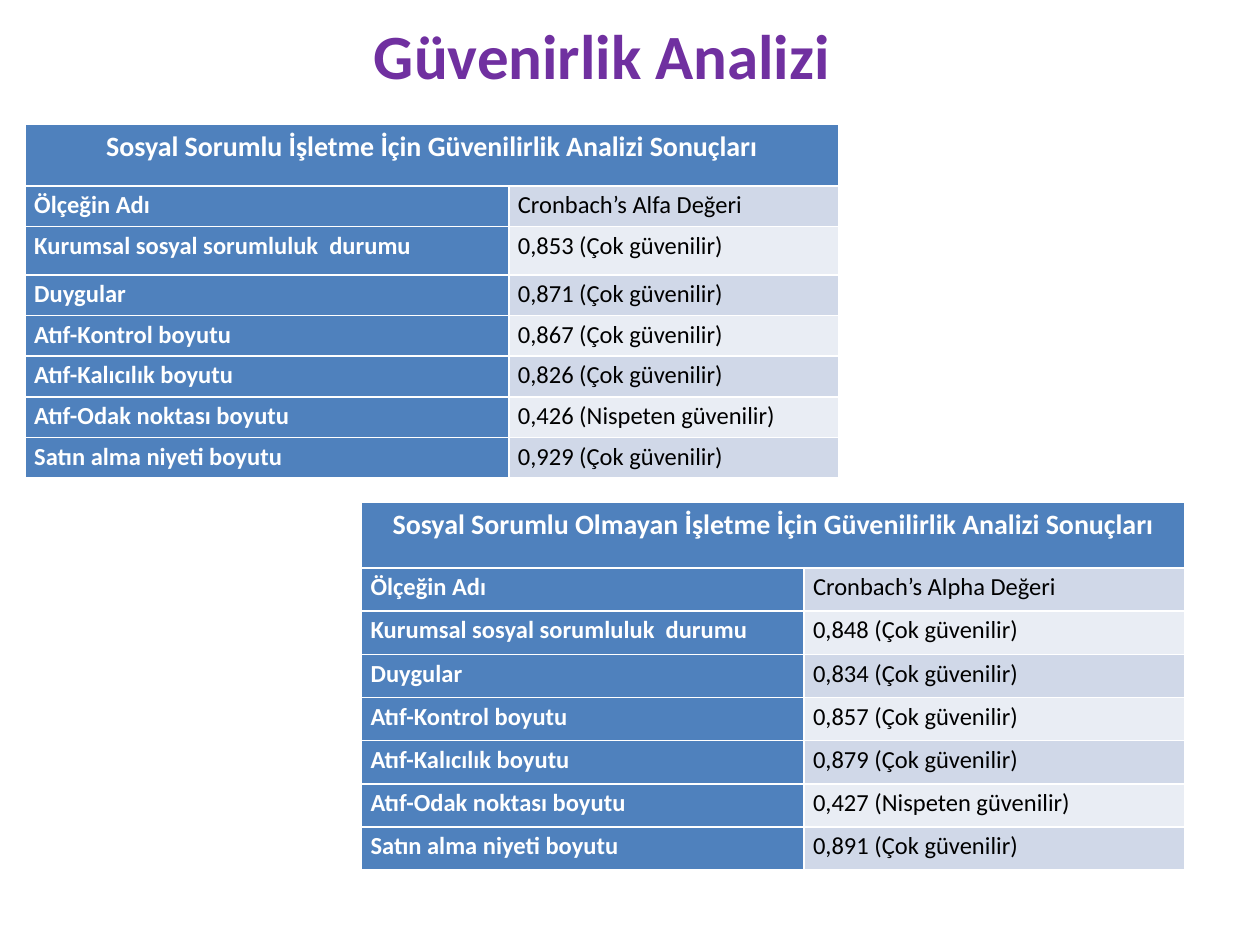
from pptx import Presentation
from pptx.dml.color import RGBColor
from pptx.enum.text import MSO_ANCHOR, PP_ALIGN
from pptx.util import Cm, Pt

CENTER, JUSTIFY = PP_ALIGN.CENTER, PP_ALIGN.JUSTIFY
MIDDLE = MSO_ANCHOR.MIDDLE

SCALES = [
    "Ölçeğin Adı",
    "Kurumsal sosyal sorumluluk  durumu",
    "Duygular",
    "Atıf-Kontrol boyutu",
    "Atıf-Kalıcılık boyutu",
    "Atıf-Odak noktası boyutu",
    "Satın alma niyeti boyutu",
]
RESPONSIBLE = [
    "Cronbach’s Alfa Değeri",
    "0,853 (Çok güvenilir)",
    "0,871 (Çok güvenilir)",
    "0,867 (Çok güvenilir)",
    "0,826 (Çok güvenilir)",
    "0,426 (Nispeten güvenilir)",
    "0,929 (Çok güvenilir)",
]
NOT_RESPONSIBLE = [
    "Cronbach’s Alpha Değeri",
    "0,848 (Çok güvenilir)",
    "0,834 (Çok güvenilir)",
    "0,857 (Çok güvenilir)",
    "0,879 (Çok güvenilir)",
    "0,427 (Nispeten güvenilir)",
    "0,891 (Çok güvenilir)",
]


def color(hex_code):
    return RGBColor.from_string(hex_code)


def write(frame, text, size=14, ink="000000", bold=False, align=JUSTIFY,
          spacing=1.15, font="Calibri"):
    paragraph = frame.paragraphs[0]
    paragraph.alignment = align
    paragraph.line_spacing = spacing
    run = paragraph.add_run()
    run.text = text
    run.font.name = font
    run.font.size = Pt(size)
    run.font.bold = bold
    run.font.color.rgb = color(ink)


class ReliabilitySlide:
    PURPLE, BLUE, WHITE = "7030A0", "4F81BD", "FFFFFF"
    BANDS = ("D0D8E8", "E9EDF4")

    def __init__(self, slide):
        self.slide = slide

    def title(self, text, left, top, width, height):
        box = self.slide.shapes.add_textbox(Cm(left), Cm(top), Cm(width), Cm(height))
        frame = box.text_frame
        frame.word_wrap = True
        frame.vertical_anchor = MIDDLE
        write(frame, text, size=36, ink=self.PURPLE, bold=True, align=CENTER, spacing=1)

    def cell(self, cell, text, fill, **text_format):
        cell.margin_left = cell.margin_right = Cm(0.18)
        cell.margin_top = cell.margin_bottom = 0
        cell.fill.solid()
        cell.fill.fore_color.rgb = color(fill)
        write(cell.text_frame, text, **text_format)

    def table(self, heading, values, left, top, widths, heights):
        """Draw a merged heading row above one row for each scale."""
        table = self.slide.shapes.add_table(
            len(heights), len(widths), Cm(left), Cm(top),
            Cm(sum(widths)), Cm(sum(heights))).table
        table.first_col = True
        for column, width in zip(table.columns, widths):
            column.width = Cm(width)
        for row, height in zip(table.rows, heights):
            row.height = Cm(height)

        table.cell(0, 0).merge(table.cell(0, 1))
        self.cell(table.cell(0, 0), heading, self.BLUE,
                  size=16, ink=self.WHITE, bold=True, align=CENTER)
        for row, (scale, value) in enumerate(zip(SCALES, values), start=1):
            self.cell(table.cell(row, 0), scale, self.BLUE, ink=self.WHITE, bold=True)
            self.cell(table.cell(row, 1), value, self.BANDS[(row - 1) % 2])


def main():
    deck = Presentation()
    deck.slide_width, deck.slide_height = Cm(25.4), Cm(19.05)
    page = ReliabilitySlide(deck.slides.add_slide(deck.slide_layouts[6]))

    page.table("Sosyal Sorumlu İşletme İçin Güvenilirlik Analizi Sonuçları",
               RESPONSIBLE, 0.51, 2.54 - 0.03, (9.75, 6.65),
               [1.24, 0.82, 0.97] + [0.82] * 5)
    page.title("Güvenirlik Analizi", 0.71, 0.33, 22.86, 1.55)
    page.table("Sosyal Sorumlu Olmayan İşletme İçin Güvenilirlik Analizi Sonuçları",
               NOT_RESPONSIBLE, 7.29, 10.13, (8.92, 7.68),
               [1.32] + [0.87] * 7)
    deck.save("out.pptx")


if __name__ == "__main__":
    main()
